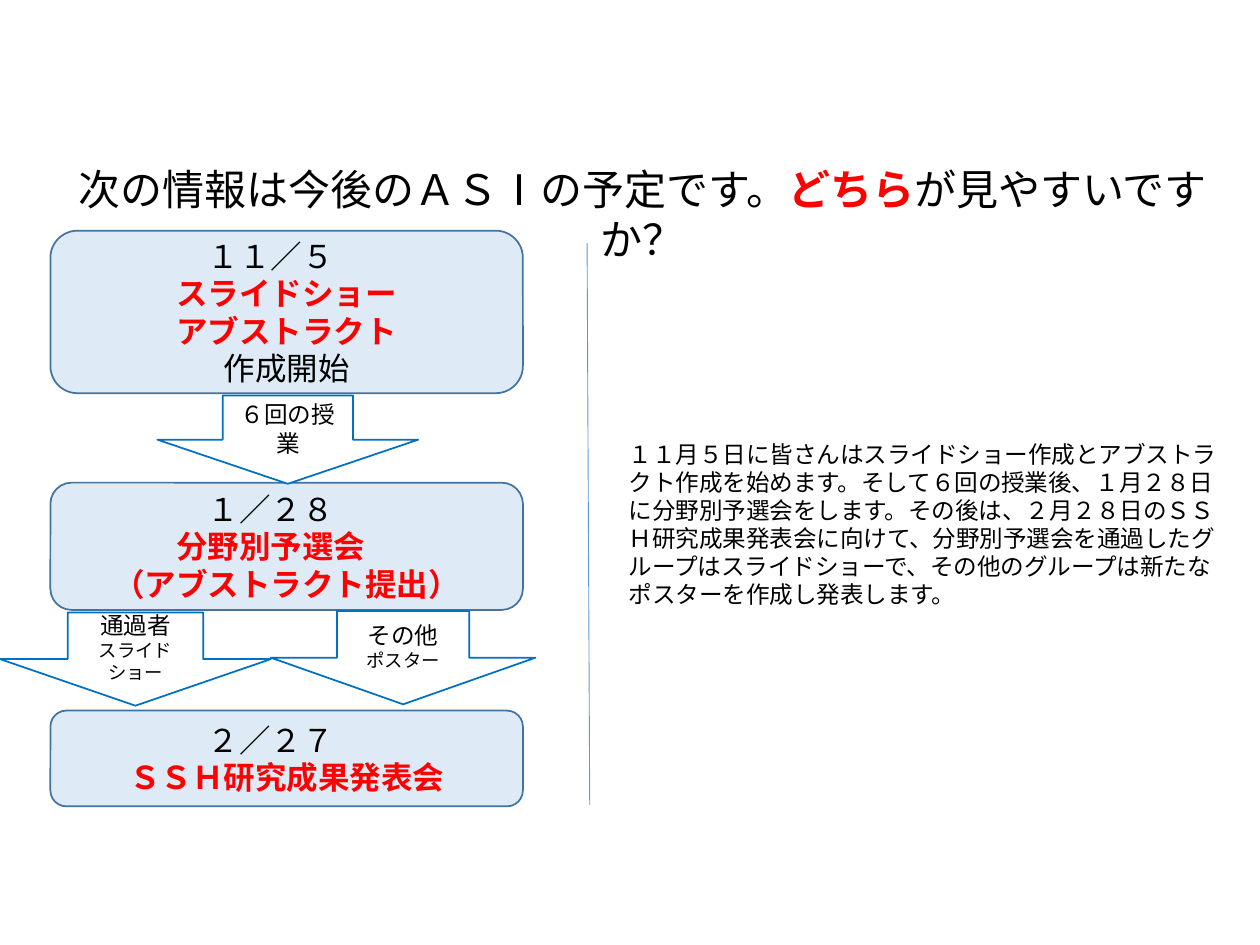
"""Build a slide comparing a flow chart of the class schedule with the same plan in prose."""
from dataclasses import dataclass

from lxml import etree
from pptx import Presentation
from pptx import util as u
from pptx.dml.color import RGBColor
from pptx.enum import shapes, text
from pptx.oxml.ns import qn


@dataclass(frozen=True)
class Theme:
    ink: str = "000000"
    accent: str = "FF0000"
    step_fill: str = "DEEBF7"
    step_line: str = "43739E"
    arrow_fill: str = "FFFFFF"
    arrow_line: str = "0070C0"
    divider: str = "5B9BD5"
    latin: str = "Calibri"
    japanese: str = "Noto Sans CJK JP"
    heading: float = 24
    step: float = 18
    body: float = 13.5
    small: float = 10.5
    leading: float = 1.19


THEME = Theme()

# Each paragraph is a list of runs: (wording, size, emphasised)
QUESTION = [[
    ("次の情報は今後のＡＳⅠの予定です。", THEME.heading, False),
    ("どちら", THEME.heading, True),
    ("が見やすいですか？", THEME.heading, False),
]]
STEPS = [
    (131.8, 92.9, [("１１／５　", False), ("スライドショー", True),
                   ("アブストラクト", True), ("作成開始", False)]),
    (275.8, 72.7, [("１／２８　", False), ("分野別予選会　", True),
                   ("（アブストラクト提出）", True)]),
    (406.1, 54.7, [("２／２７　", False), ("ＳＳＨ研究成果発表会", True)]),
]
ARROWS = [
    ((90, 226.1, 149, 50.4), [("６回の授業", THEME.body)]),
    ((0, 350, 154.8, 53.3), [("通過者", THEME.body), ("スライドショー", THEME.small)]),
    ((154.8, 349.2, 151.2, 53.3), [("その他", THEME.body), ("ポスター", THEME.small)]),
]
PROSE = (
    "１１月５日に皆さんはスライドショー作成とアブストラクト作成を始めます。"
    "そして６回の授業後、１月２８日に分野別予選会をします。"
    "その後は、２月２８日のＳＳＨ研究成果発表会に向けて、"
    "分野別予選会を通過したグループはスライドショーで、"
    "その他のグループは新たなポスターを作成し発表します。"
)
STEP_LEFT, STEP_WIDTH = 28.8, 270


def points(*lengths):
    return [u.Pt(length) for length in lengths]


def write(frame, paragraphs, font, align, anchor):
    frame.word_wrap = True
    frame.vertical_anchor = anchor
    for index, runs in enumerate(paragraphs):
        paragraph = frame.add_paragraph() if index else frame.paragraphs[0]
        paragraph.alignment = align
        paragraph.line_spacing = u.Pt(round(runs[0][1] * THEME.leading, 1))
        for wording, size, emphasised in runs:
            run = paragraph.add_run()
            run.text = wording
            run.font.name = font
            run.font.size = u.Pt(size)
            run.font.bold = emphasised
            run.font.color.rgb = RGBColor.from_string(THEME.accent if emphasised else THEME.ink)
            east_asian = etree.SubElement(run.font._element, qn("a:ea"))
            east_asian.set("typeface", THEME.japanese)


def add_figure(slide, preset, box, fill, line, paragraphs, font):
    figure = slide.shapes.add_shape(preset, *points(*box))
    figure.shadow.inherit = False
    figure.fill.solid()
    figure.fill.fore_color.rgb = RGBColor.from_string(fill)
    figure.line.color.rgb = RGBColor.from_string(line)
    figure.line.width = u.Pt(1)
    write(figure.text_frame, paragraphs, font, text.PP_ALIGN.CENTER, text.MSO_ANCHOR.MIDDLE)


def add_words(slide, box, paragraphs, align, anchor):
    words = slide.shapes.add_textbox(*points(*box))
    write(words.text_frame, paragraphs, THEME.latin, align, anchor)


def add_divider(slide, ends):
    divider = slide.shapes.add_connector(shapes.MSO_CONNECTOR.STRAIGHT, *points(*ends))
    divider.line.color.rgb = RGBColor.from_string(THEME.divider)
    divider.line.width = u.Pt(0.5)
    etree.SubElement(divider._element.spPr, qn("a:effectLst"))


def main():
    deck = Presentation()
    deck.slide_width, deck.slide_height = points(720, 540)
    slide = deck.slides.add_slide(deck.slide_layouts[6])

    add_words(slide, (28.8, 90, 676.8, 36), QUESTION,
              text.PP_ALIGN.CENTER, text.MSO_ANCHOR.TOP)
    for top, height, lines in STEPS:
        add_figure(slide, shapes.MSO_SHAPE.ROUNDED_RECTANGLE,
                   (STEP_LEFT, top, STEP_WIDTH, height), THEME.step_fill, THEME.step_line,
                   [[(wording, THEME.step, emphasised)] for wording, emphasised in lines],
                   THEME.japanese)
    for box, lines in ARROWS:
        add_figure(slide, shapes.MSO_SHAPE.DOWN_ARROW, box, THEME.arrow_fill, THEME.arrow_line,
                   [[(wording, size, False)] for wording, size in lines], THEME.latin)
    add_divider(slide, (335.5, 139, 337, 460))
    add_words(slide, (352.1, 139, 353.5, 321), [[(PROSE, THEME.body, False)]],
              text.PP_ALIGN.LEFT, text.MSO_ANCHOR.MIDDLE)

    deck.save("out.pptx")


if __name__ == "__main__":
    main()
